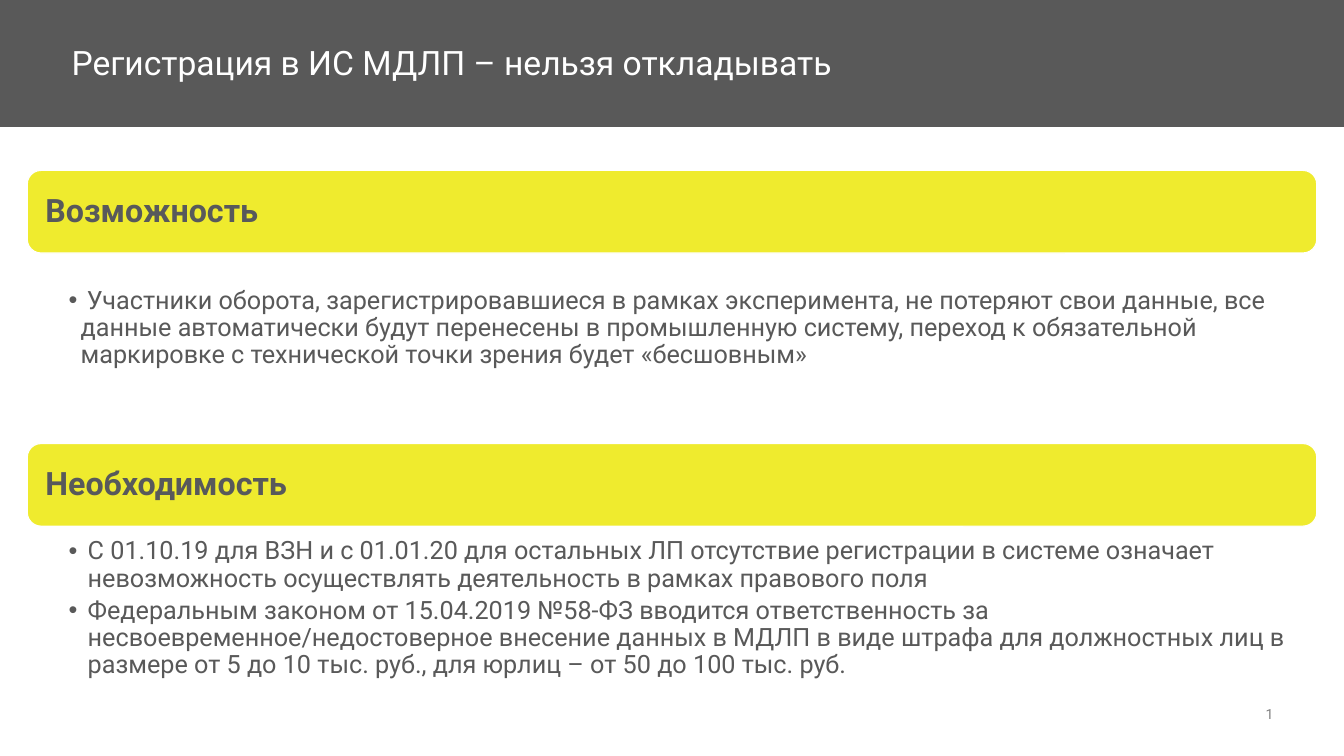
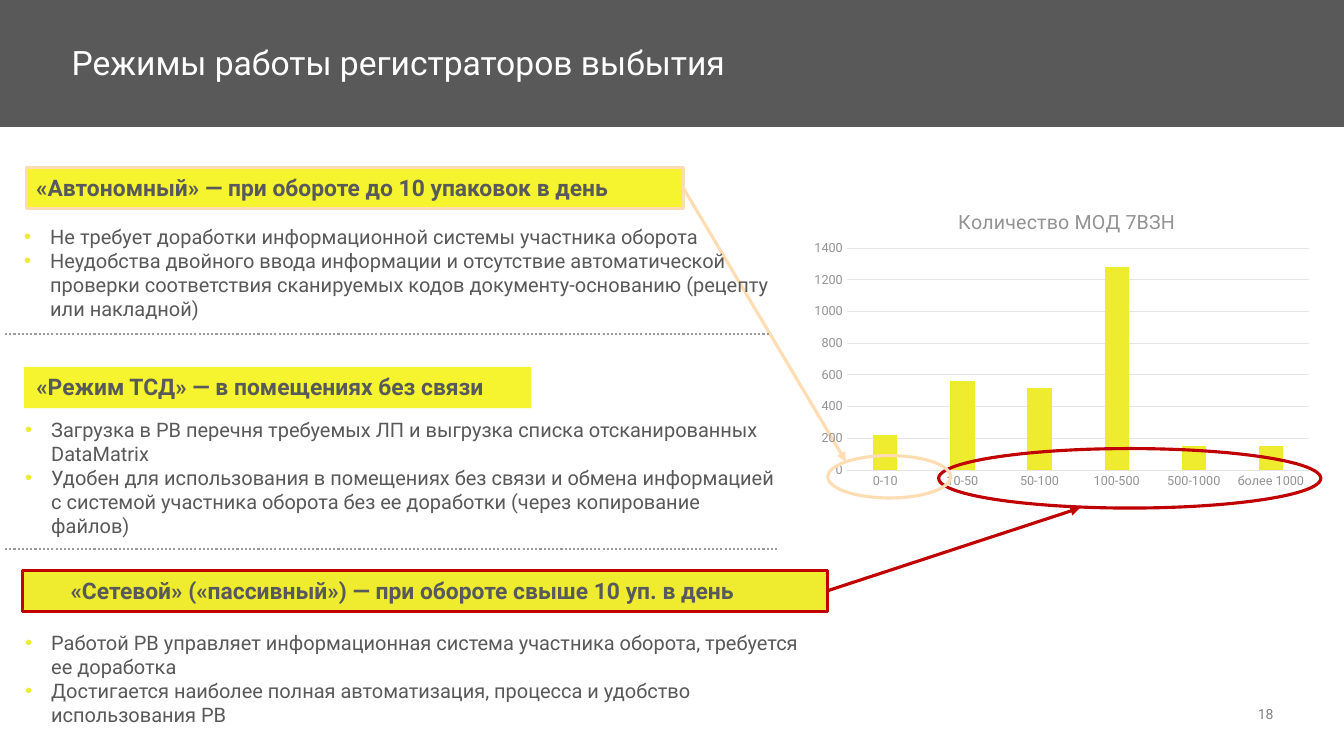
from dataclasses import dataclass

from lxml import etree
from pptx import Presentation
from pptx.chart.data import CategoryChartData
from pptx.dml.color import RGBColor
from pptx.enum.chart import XL_CHART_TYPE, XL_TICK_MARK
from pptx.enum.dml import MSO_LINE
from pptx.enum.shapes import MSO_CONNECTOR, MSO_SHAPE
from pptx.enum.text import MSO_ANCHOR, PP_ALIGN
from pptx.oxml import parse_xml
from pptx.oxml.ns import nsdecls, qn
from pptx.util import Inches, Pt

RECTANGLE = MSO_SHAPE.RECTANGLE
ROUNDED = MSO_SHAPE.ROUNDED_RECTANGLE
OVAL = MSO_SHAPE.OVAL
STRAIGHT = MSO_CONNECTOR.STRAIGHT
DOTTED = MSO_LINE.ROUND_DOT
TOP, MIDDLE, BOTTOM = MSO_ANCHOR.TOP, MSO_ANCHOR.MIDDLE, MSO_ANCHOR.BOTTOM
LEFT, RIGHT = PP_ALIGN.LEFT, PP_ALIGN.RIGHT
NO_TICK = XL_TICK_MARK.NONE
COLUMNS = XL_CHART_TYPE.COLUMN_CLUSTERED


@dataclass(frozen=True)
class Theme:
    font: str = "Roboto"
    white: str = "FFFFFF"
    dark: str = "595959"
    heading: str = "58595B"
    yellow: str = "EFEB2E"
    bright: str = "F6F42E"
    peach: str = "FFDDB3"
    red: str = "C00000"
    dots: str = "9B9B9B"
    number: str = "808080"
    axis: str = "939393"
    grid: str = "E6E6E6"
    title_size: float = 24
    band_size: float = 23
    body_size: float = 18
    mode_size: float = 16.3
    list_size: float = 14.3
    chart_title_size: float = 14
    number_size: float = 10
    axis_size: float = 9


THEME = Theme()


def rgb(color):
    return RGBColor.from_string(color)


def style_font(font, size, color, bold=False):
    font.name, font.size, font.bold = THEME.font, Pt(size), bold
    font.color.rgb = rgb(color)


def add_bullet(para, indent, color):
    properties = para._p.get_or_add_pPr()
    properties.set("marL", str(Inches(indent)))
    properties.set("indent", str(-Inches(indent)))
    bullet_color = etree.SubElement(properties, qn("a:buClr"))
    etree.SubElement(bullet_color, qn("a:srgbClr"), val=color)
    etree.SubElement(properties, qn("a:buFont"), typeface="Arial")
    etree.SubElement(properties, qn("a:buChar"), char="•")


def write_text(box, *texts, size, color, bold=False, align=LEFT, anchor=TOP,
               insets=(0, 0, 0, 0), spacing=1.0, after=0, indent=None, bullet=None):
    frame = box.text_frame
    frame.word_wrap = True
    frame.vertical_anchor = anchor
    (frame.margin_left, frame.margin_top,
     frame.margin_right, frame.margin_bottom) = map(Inches, insets)
    for index, text in enumerate(texts):
        para = frame.add_paragraph() if index else frame.paragraphs[0]
        if indent:
            add_bullet(para, indent, bullet or color)
        para.alignment, para.line_spacing, para.space_after = align, spacing, Pt(after)
        span = para.add_run()
        span.text = text
        style_font(span.font, size, color, bold)


def place_by_fraction(element, x, y, width=None, height=None):
    for old in element.findall(qn("c:layout")):
        element.remove(old)
    layout = parse_xml(f"<c:layout {nsdecls('c')}><c:manualLayout/></c:layout>")
    manual = layout[0]
    if width:
        etree.SubElement(manual, qn("c:layoutTarget"), val="inner")
    for name in ("xMode", "yMode"):
        etree.SubElement(manual, qn(f"c:{name}"), val="edge")
    for name, value in (("x", x), ("y", y), ("w", width), ("h", height)):
        if value:
            etree.SubElement(manual, qn(f"c:{name}"), val=str(value))
    return layout


class Deck:
    def __init__(self):
        self.deck = Presentation()
        self.deck.slide_width, self.deck.slide_height = Inches(13.33), Inches(7.5)
        self.page = None

    def start_page(self, title, number):
        self.page = self.deck.slides.add_slide(self.deck.slide_layouts[6])
        self.shape(RECTANGLE, 0, 0, 13.33, 1.26, THEME.dark, THEME.dark, 0.75)
        self.text(0.71, 0.46, 11.08, 0.36, title, size=THEME.title_size,
                  color=THEME.white, anchor=MIDDLE, spacing=0.9)
        self.text(12.21, 7, 0.42, 0.17, number, size=THEME.number_size,
                  color=THEME.number, align=RIGHT, anchor=BOTTOM)

    def text(self, left, top, width, height, *texts, **format):
        box = self.page.shapes.add_textbox(*map(Inches, (left, top, width, height)))
        write_text(box, *texts, **format)

    def shape(self, kind, left, top, width, height, fill=None, line=None, weight=2.25):
        shape = self.page.shapes.add_shape(kind, *map(Inches, (left, top, width, height)))
        shape.shadow.inherit = False
        if fill:
            shape.fill.solid()
            shape.fill.fore_color.rgb = rgb(fill)
        else:
            shape.fill.background()
        if line:
            shape.line.color.rgb = rgb(line)
            shape.line.width = Pt(weight)
        else:
            shape.line.fill.background()
        return shape

    def line(self, start, end, color, weight=2.25, dash=None, arrow=False):
        line = self.page.shapes.add_connector(STRAIGHT, *map(Inches, (*start, *end)))
        line.line.color.rgb = rgb(color)
        line.line.width = Pt(weight)
        if dash:
            line.line.dash_style = dash
        if arrow:
            etree.SubElement(line.line._get_or_add_ln(), qn("a:tailEnd"), type="triangle")
        etree.SubElement(line._element.spPr, qn("a:effectLst"))

    def section(self, top, heading, body_top, *texts, indent):
        band = self.shape(ROUNDED, 0.27, top, 12.79, 0.82, THEME.yellow, THEME.white, 0.85)
        write_text(band, heading, size=THEME.band_size, color=THEME.heading, bold=True,
                   anchor=MIDDLE, insets=(0.14, 0.1, 0.1, 0.1), spacing=0.9)
        self.text(0.27, body_top, 12.79, 1.4, *texts, size=THEME.body_size,
                  color=THEME.dark, insets=(0.41, 0.03, 0.14, 0.03), spacing=0.9,
                  after=3.6, indent=indent)

    def mode(self, frame, heading, list_area, *texts, fill, line=None, inset=0.1):
        bar = self.shape(RECTANGLE, *frame, fill, line)
        write_text(bar, heading, size=THEME.mode_size, color=THEME.heading, bold=True,
                   anchor=MIDDLE, insets=(inset, 0.04, 0, 0.06))
        self.text(*list_area, *texts, size=THEME.list_size, color=THEME.dark,
                  insets=(0.1, 0.05, 0.1, 0.05), indent=0.26, bullet=THEME.yellow)

    def column_chart(self, left, top, width, height, title, values):
        data = CategoryChartData()
        data.categories = list(values)
        data.add_series(title, list(values.values()))
        chart = self.page.shapes.add_chart(
            COLUMNS, *map(Inches, (left, top, width, height)), data).chart
        style_font(chart.font, THEME.number_size, THEME.dark)
        chart.has_legend = False
        chart.has_title = True
        chart.chart_title.include_in_layout = False
        para = chart.chart_title.text_frame.paragraphs[0]
        span = para.add_run()
        span.text = title
        style_font(span.font, THEME.chart_title_size, THEME.axis)
        title_element = chart.chart_title._element
        title_layout = place_by_fraction(title_element, 0.29, 0.06)
        title_element.find(qn("c:tx")).addnext(title_layout)
        plot_area = chart._chartSpace.chart.plotArea
        plot_area.insert(0, place_by_fraction(plot_area, 0.08, 0.2, 0.9, 0.72))
        plot = chart.plots[0]
        plot.gap_width, plot.overlap, plot.vary_by_categories = 219, -27, False
        series = plot.series[0]
        series.format.fill.solid()
        series.format.fill.fore_color.rgb = rgb(THEME.yellow)
        for axis in (chart.category_axis, chart.value_axis):
            axis.major_tick_mark = axis.minor_tick_mark = NO_TICK
            style_font(axis.tick_labels.font, THEME.axis_size, THEME.axis)
        value_axis = chart.value_axis
        value_axis.minimum_scale, value_axis.maximum_scale = 0, 1400
        value_axis.major_unit = 200
        value_axis.format.line.fill.background()
        for line in (chart.category_axis.format.line, value_axis.major_gridlines.format.line):
            line.color.rgb = rgb(THEME.grid)
            line.width = Pt(0.75)

    def save(self):
        self.deck.save("out.pptx")


def build_registration(deck):
    deck.start_page("Регистрация в ИС МДЛП – нельзя откладывать", "1")
    deck.section(
        1.69, "Возможность", 2.82,
        " Участники оборота, зарегистрировавшиеся в рамках эксперимента, не потеряют свои "
        "данные, все данные автоматически будут перенесены в промышленную систему, переход "
        "к обязательной маркировке с технической точки зрения будет «бесшовным»",
        indent=0.12)
    deck.section(
        4.4, "Необходимость", 5.31,
        "С 01.10.19 для ВЗН и с 01.01.20 для остальных ЛП отсутствие регистрации в системе "
        "означает невозможность осуществлять деятельность в рамках правового поля",
        "Федеральным законом от 15.04.2019 №58-ФЗ вводится ответственность "
        "за несвоевременное/недостоверное внесение данных в МДЛП в виде штрафа для "
        "должностных лиц в размере от 5 до 10 тыс. руб., для юрлиц – от 50 до 100 тыс. руб.",
        indent=0.19)


def build_modes(deck):
    deck.start_page("Режимы работы регистраторов выбытия", "18")
    deck.line((6.78, 1.87), (8.39, 4.58), THEME.peach, arrow=True)
    deck.mode(
        (0.26, 1.66, 6.52, 0.41), "«Автономный» — при обороте до 10 упаковок в день",
        (0.14, 2.18, 7.67, 1.09),
        "Не требует доработки информационной системы участника оборота",
        "Неудобства двойного ввода информации и отсутствие автоматической проверки "
        "соответствия сканируемых кодов документу-основанию (рецепту или накладной)",
        fill=THEME.bright, line=THEME.peach)
    deck.mode(
        (0.24, 3.64, 5.03, 0.41), "«Режим ТСД» — в помещениях без связи",
        (0.15, 4.09, 7.65, 1.33),
        "Загрузка в РВ перечня требуемых ЛП и выгрузка списка отсканированных DataMatrix",
        "Удобен для использования в помещениях без связи и обмена информацией с системой "
        "участника оборота без ее доработки (через копирование файлов)",
        fill=THEME.bright, inset=0.12)
    deck.mode(
        (0.22, 5.66, 7.99, 0.41), "«Сетевой» («пассивный») — при обороте свыше 10 уп. в день",
        (0.15, 6.21, 8.06, 1.09),
        "Работой РВ управляет информационная система участника оборота, требуется "
        "ее доработка",
        "Достигается наиболее полная автоматизация, процесса и удобство использования РВ",
        fill=THEME.yellow, line=THEME.red, inset=0.48)
    for end, height in ((7.63, 3.31), (7.72, 5.45)):
        deck.line((0.05, height), (end, height), THEME.dots, 1.5, dash=DOTTED)
    deck.column_chart(
        7.99, 1.85, 5.1, 3.06, "Количество МОД 7ВЗН",
        {"0-10": 220, "10-50": 560, "50-100": 520, "100-500": 1280,
         "500-1000": 150, "более 1000": 150})
    deck.shape(OVAL, 9.31, 4.45, 3.79, 0.59, line=THEME.red)
    deck.line((8.21, 5.86), (10.71, 5.04), THEME.red, arrow=True)
    deck.shape(OVAL, 8.21, 4.52, 1.22, 0.42, line=THEME.peach)


def main():
    deck = Deck()
    build_registration(deck)
    build_modes(deck)
    deck.save()


if __name__ == "__main__":
    main()
